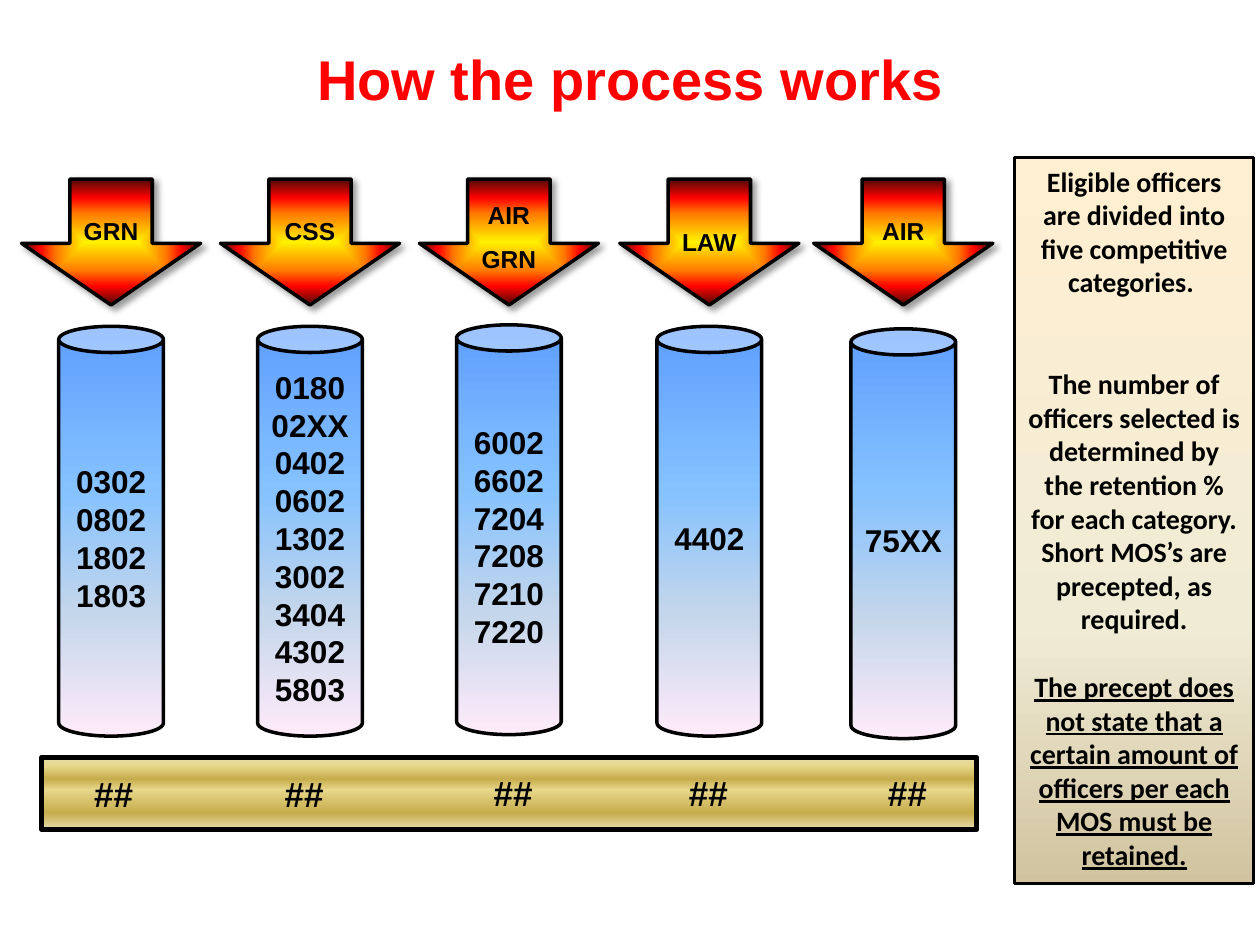
from dataclasses import dataclass

from lxml import etree
from pptx import Presentation
from pptx.dml.color import RGBColor
from pptx.enum.shapes import MSO_SHAPE
from pptx.enum.text import MSO_ANCHOR, PP_ALIGN
from pptx.oxml.ns import qn
from pptx.util import Cm, Pt

RECTANGLE, CAN, DOWN_ARROW = MSO_SHAPE.RECTANGLE, MSO_SHAPE.CAN, MSO_SHAPE.DOWN_ARROW
TOP, MIDDLE = MSO_ANCHOR.TOP, MSO_ANCHOR.MIDDLE
LEFT, CENTER = PP_ALIGN.LEFT, PP_ALIGN.CENTER

COLORS = {"ink": "000000", "title": "FF0000"}
# Gradient stops: percent and colour
GRADIENTS = {
    "panel": {0: "FFEFD1", 65: "F0EBD5", 100: "D1C39F"},
    "can": {0: "5E9EFF", 40: "85C2FF", 70: "C4D6EB", 100: "FFEBFA"},
    "gold": {0: "E6DCAC", 12: "E6D78A", 30: "C7AC4C", 45: "E6D78A", 77: "C7AC4C", 100: "E6DCAC"},
    "fire": {0: "FFF200", 45: "FF7A00", 70: "FF0300", 100: "4D0808"},
}
PANEL_LINE = 19.5  # points, one line of panel text


@dataclass
class Category:
    labels: list
    codes: list
    center: float
    label_inset: float
    can_top: float
    quota_left: float
    quota_top: float


CATEGORIES = [
    Category(["GRN"], ["0302", "0802", "1802", "1803"], 2.24, 0.74, 6.58, 1.65, 15.44),
    Category(["CSS"], ["0180", "02XX", "0402", "0602", "1302", "3002", "3404", "4302", "5803"],
             6.25, 0.74, 6.58, 5.49, 15.44),
    Category(["AIR", "GRN"], ["6002", "6602", "7204", "7208", "7210", "7220"],
             10.26, 0.13, 6.55, 9.7, 15.42),
    Category(["LAW"], ["4402"], 14.3, 0.97, 6.58, 13.64, 15.42),
    Category(["AIR"], ["75XX"], 18.21, 0.74, 6.63, 17.65, 15.42),
]

# Panel text: wording, blank lines before it, underlined
PANEL_TEXT = [
    ("Eligible officers are divided into five competitive categories. ", 0, False),
    ("The number of officers selected is determined by the retention % for each category.", 2, False),
    ("Short MOS’s are precepted, as required.", 0, False),
    ("The precept does not state that a certain amount of officers per each MOS must be retained.",
     1, True),
]


def add_child(parent, tag, **attributes):
    return etree.SubElement(parent, qn(tag), {k: str(v) for k, v in attributes.items()})


def add_outer_shadow(effects, blur, distance, alpha):
    shadow = add_child(effects, "a:outerShdw", blurRad=Pt(blur), dist=Pt(distance),
                       dir=45 * 60000, algn="tl", rotWithShape=0)
    ink = add_child(shadow, "a:srgbClr", val=COLORS["ink"])
    add_child(ink, "a:alpha", val=alpha * 1000)


def fill_gradient(shape, stops, from_center=False):
    shape.fill.gradient()
    gradient = shape._element.spPr.find(qn("a:gradFill"))
    for child in list(gradient):
        gradient.remove(child)
    stop_list = add_child(gradient, "a:gsLst")
    for percent, color in stops.items():
        add_child(add_child(stop_list, "a:gs", pos=percent * 1000), "a:srgbClr", val=color)
    if from_center:
        focus = add_child(gradient, "a:path", path="shape")
        add_child(focus, "a:fillToRect", l=50000, t=50000, r=50000, b=50000)
    else:
        add_child(gradient, "a:lin", ang=90 * 60000, scaled=0)


def add_block(slide, kind, box, gradient, line_width, from_center=False):
    block = slide.shapes.add_shape(kind, *map(Cm, box))
    block.shadow.inherit = False
    fill_gradient(block, GRADIENTS[gradient], from_center)
    block.line.color.rgb = RGBColor.from_string(COLORS["ink"])
    block.line.width = Pt(line_width)
    return block


def set_frame(shape, anchor, side=0.25, top=0.13, wrap=True):
    frame = shape.text_frame
    frame.word_wrap = wrap
    frame.vertical_anchor = anchor
    frame.margin_left = frame.margin_right = Cm(side)
    frame.margin_top = Cm(top)
    return frame


def write(frame, lines, size, font="Arial", color="ink", align=CENTER):
    """Write each line as a paragraph with one bold run."""
    for index, line in enumerate(lines):
        paragraph = frame.paragraphs[0] if index == 0 else frame.add_paragraph()
        paragraph.alignment = align
        run = paragraph.add_run()
        run.text = line
        run.font.name = font
        run.font.size = Pt(size)
        run.font.bold = True
        run.font.color.rgb = RGBColor.from_string(COLORS[color])
    return frame.paragraphs


def add_title(slide):
    title = slide.shapes.add_textbox(Cm(3.28), Cm(0.84), Cm(18.85), Cm(1.47))
    heading = write(set_frame(title, MIDDLE), ["How the process works"], 32, color="title")[0]
    properties = heading.runs[0].font._element
    effects = etree.Element(qn("a:effectLst"))
    properties.find(qn("a:solidFill")).addnext(effects)
    add_outer_shadow(effects, 0, 3, 100)


def add_panel(slide):
    panel = add_block(slide, RECTANGLE, (20.45, 3.18, 4.83, 14.63), "panel", 1.75)
    texts = [text for text, _, _ in PANEL_TEXT]
    paragraphs = write(set_frame(panel, TOP), texts, 16, font="Calibri")
    for paragraph, (_, gap, underlined) in zip(paragraphs, PANEL_TEXT):
        paragraph.space_before = Pt(gap * PANEL_LINE)
        if underlined:
            paragraph.runs[0].font.underline = True


def add_can(slide, category):
    width = 2.11
    can = add_block(slide, CAN, (category.center - width / 2, category.can_top, width, 8.26),
                    "can", 2)
    write(set_frame(can, MIDDLE, side=0.1), category.codes, 18)


def add_arrow(slide, category):
    width = 3.61
    arrow = add_block(slide, DOWN_ARROW, (category.center - width / 2, 3.61, width, 2.54),
                      "fire", 2, from_center=True)
    arrow.adjustments[0], arrow.adjustments[1] = 0.46, 0.49
    add_outer_shadow(arrow._element.spPr.find(qn("a:effectLst")), 4, 3, 40)
    frame = set_frame(arrow, TOP, side=0.1, top=category.label_inset)
    for label in write(frame, category.labels, 14):
        label.line_spacing = 1.5 if len(category.labels) > 1 else 1.0


def add_quota(slide, category):
    quota = slide.shapes.add_textbox(Cm(category.quota_left), Cm(category.quota_top),
                                     Cm(1.3), Cm(1.12))
    write(set_frame(quota, TOP, wrap=False), ["##"], 20, align=LEFT)


def main():
    deck = Presentation()
    deck.slide_width, deck.slide_height = Cm(25.4), Cm(19.05)
    slide = deck.slides.add_slide(deck.slide_layouts[6])

    # Title and explanation
    add_title(slide)
    add_panel(slide)

    # Quota bar under the five competitive categories
    add_block(slide, RECTANGLE, (0.84, 15.27, 18.85, 1.45), "gold", 3)
    for category in CATEGORIES:
        add_can(slide, category)
        add_arrow(slide, category)
        add_quota(slide, category)

    deck.save("out.pptx")


if __name__ == "__main__":
    main()
